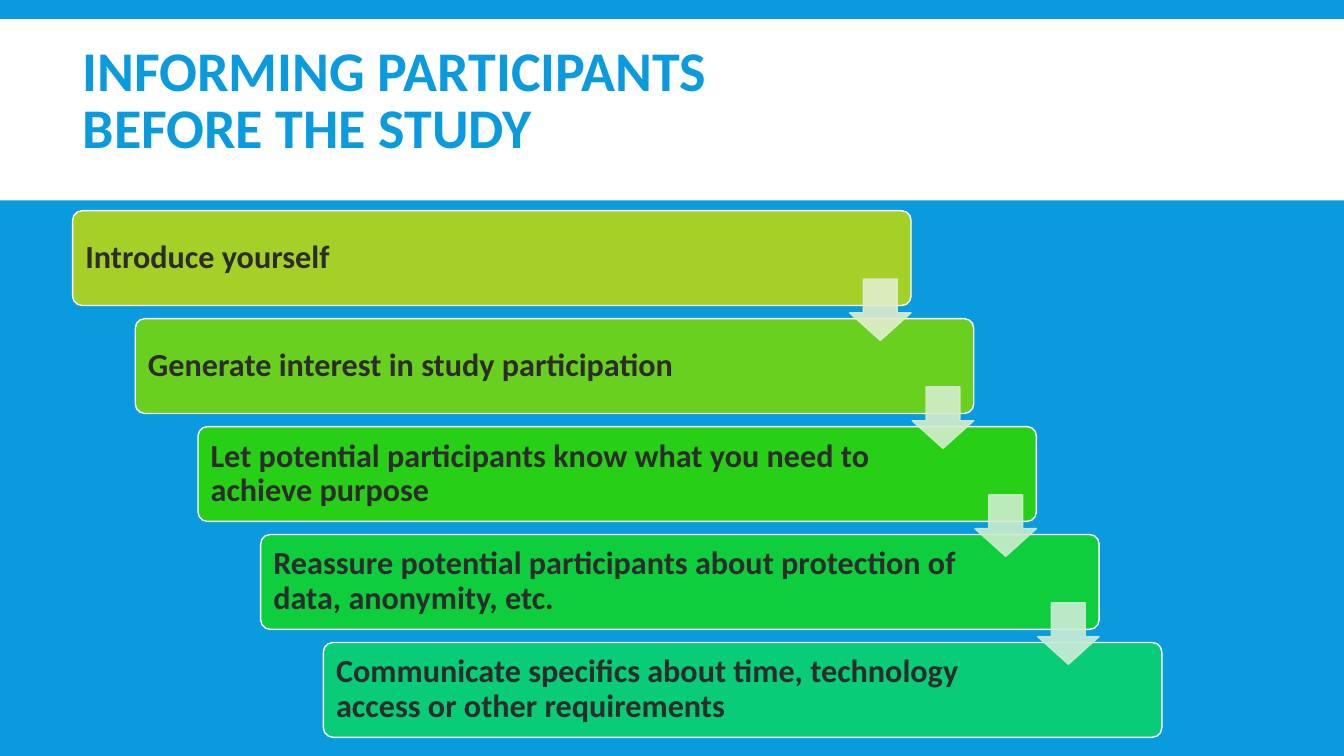
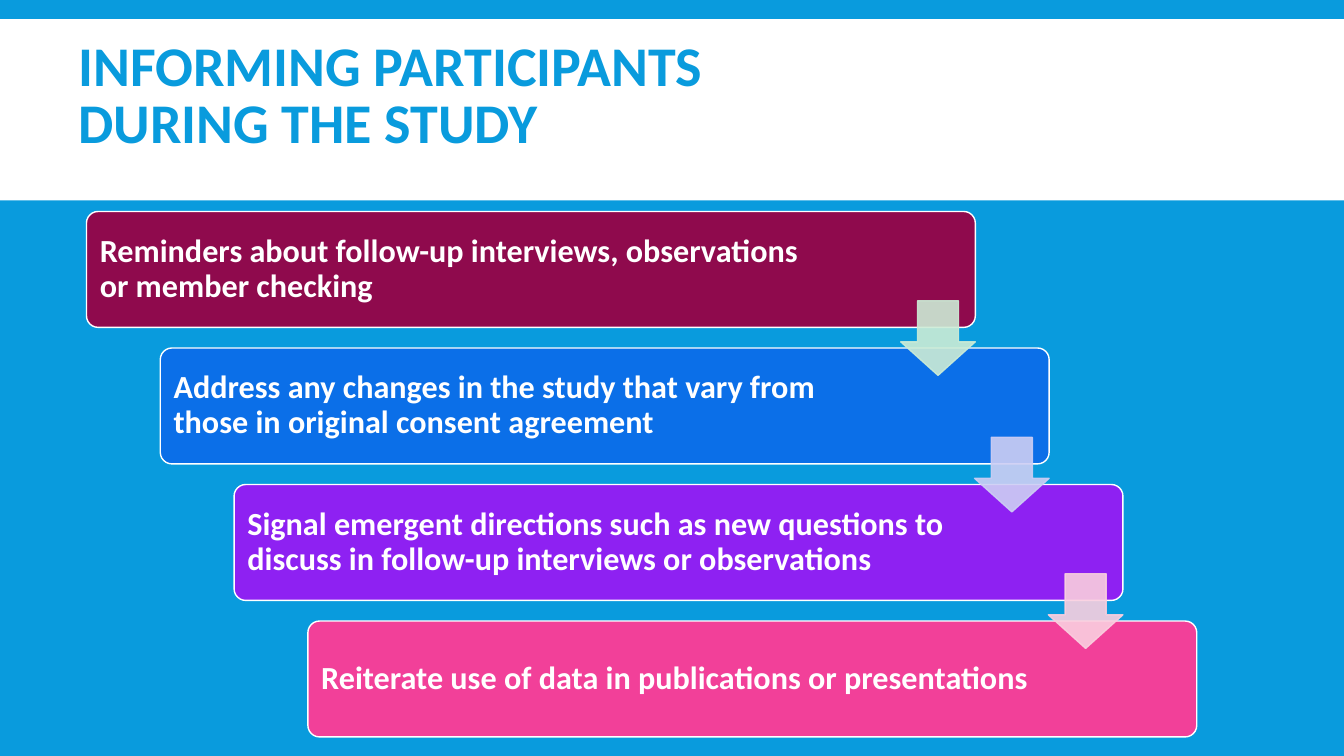
from dataclasses import dataclass

from lxml.etree import SubElement
from pptx import Presentation
from pptx.dml.color import RGBColor
from pptx.enum.shapes import MSO_SHAPE
from pptx.enum.text import MSO_ANCHOR, MSO_AUTO_SIZE, PP_ALIGN
from pptx.oxml.ns import qn
from pptx.util import Cm, Pt

BLUE = "099BDD"
WHITE = "FFFFFF"
DARK = "2C2C2C"
FONT = "Calibri"
SLIDE_WIDTH, SLIDE_HEIGHT = 33.87, 19.05
TITLE_WIDTH, TITLE_HEIGHT = 27.0, 4.17
ARROW_OVERLAP = 0.67
ARROW_OPACITY = 90


@dataclass(frozen=True)
class Step:
    text: str
    fill: str
    arrow: str = ""


@dataclass(frozen=True)
class Staircase:
    title: tuple[str, str]
    title_left: float
    title_top: float
    left: float
    top: float
    width: float
    height: float
    shift: float
    drop: float
    arrow_size: float
    first_inset: float
    next_inset: float
    text_color: str
    steps: tuple[Step, ...]


BEFORE = Staircase(
    title=("INFORMING PARTICIPANTS ", "BEFORE THE STUDY"),
    title_left=1.83, title_top=0.51,
    left=1.83, top=5.31, width=21.13, height=2.39,
    shift=1.58, drop=2.72, arrow_size=1.55,
    first_inset=2.95, next_inset=3.35, text_color=DARK,
    steps=(
        Step("Introduce yourself", "A5D028", "E1EECD"),
        Step("Generate interest in study participation", "69D01F", "D6EDCD"),
        Step("Let potential participants know what you need to achieve purpose",
             "27CF17", "CCEDCD"),
        Step("Reassure potential participants about protection of data, anonymity, etc.",
             "0FCE3D", "CCECD7"),
        Step("Communicate specifics about time, technology access or other requirements",
             "08CC78"),
    ),
)

DURING = Staircase(
    title=("INFORMING PARTICIPANTS ", "DURING THE STUDY"),
    title_left=1.73, title_top=0.38,
    left=2.18, top=5.33, width=22.4, height=2.92,
    shift=1.86, drop=3.44, arrow_size=1.88,
    first_inset=3.48, next_inset=4.04, text_color=WHITE,
    steps=(
        Step("Reminders about follow-up interviews, observations or member checking",
             "8F0A4D", "CCECD6"),
        Step("Address any changes in the study that vary from those in original consent agreement",
             "0B6FE8", "CDCEF4"),
        Step("Signal emergent directions such as new questions to discuss in "
             "follow-up interviews or observations", "8E21F2", "FACFDF"),
        Step("Reiterate use of data in publications or presentations", "F24099"),
    ),
)


def paint(target, color: str) -> None:
    target.solid()
    target.fore_color.rgb = RGBColor.from_string(color)


def add_span(para, text: str, size: float, color: str) -> None:
    span = para.add_run()
    span.text = text
    span.font.name = FONT
    span.font.size = Pt(size)
    span.font.bold = True
    span.font.color.rgb = RGBColor.from_string(color)


def add_block(page, kind, left: float, top: float, width: float, height: float,
              fill: str, outline: str = ""):
    block = page.shapes.add_shape(kind, Cm(left), Cm(top), Cm(width), Cm(height))
    block.shadow.inherit = False
    paint(block.fill, fill)
    if outline:
        paint(block.line.fill, outline)
        block.line.width = Pt(1)
    else:
        block.line.fill.background()
    return block


def set_opacity(shape, percent: int) -> None:
    for color in shape.element.spPr.iter(qn("a:srgbClr")):
        SubElement(color, qn("a:alpha")).set("val", str(percent * 1000))


def add_title(page, stairs: Staircase) -> None:
    title = page.shapes.title
    title.left, title.top = Cm(stairs.title_left), Cm(stairs.title_top)
    title.width, title.height = Cm(TITLE_WIDTH), Cm(TITLE_HEIGHT)
    frame = title.text_frame
    frame.word_wrap = True
    frame.auto_size = MSO_AUTO_SIZE.NONE
    frame.vertical_anchor = MSO_ANCHOR.MIDDLE
    para = frame.paragraphs[0]
    para.alignment = PP_ALIGN.LEFT
    para.line_spacing = 0.85
    first, second = stairs.title
    add_span(para, first, 40, BLUE)
    para.add_line_break()
    add_span(para, second, 40, BLUE)


def add_step(page, stairs: Staircase, index: int, step: Step) -> None:
    box = add_block(page, MSO_SHAPE.ROUNDED_RECTANGLE,
                    stairs.left + index * stairs.shift, stairs.top + index * stairs.drop,
                    stairs.width, stairs.height, step.fill, WHITE)
    box.adjustments[0] = 0.1
    frame = box.text_frame
    frame.word_wrap = True
    frame.vertical_anchor = MSO_ANCHOR.MIDDLE
    frame.margin_left = frame.margin_top = frame.margin_bottom = Cm(0.25)
    frame.margin_right = Cm(stairs.next_inset if index else stairs.first_inset)
    para = frame.paragraphs[0]
    para.alignment = PP_ALIGN.LEFT
    para.line_spacing = 0.9
    add_span(para, step.text, 23, stairs.text_color)


def add_arrow(page, stairs: Staircase, index: int, color: str) -> None:
    size = stairs.arrow_size
    right = stairs.left + index * stairs.shift + stairs.width
    bottom = stairs.top + index * stairs.drop + stairs.height
    arrow = add_block(page, MSO_SHAPE.DOWN_ARROW, right - size, bottom - ARROW_OVERLAP,
                      size, size, color, color)
    arrow.adjustments[0] = 0.55
    arrow.adjustments[1] = 0.45
    set_opacity(arrow, ARROW_OPACITY)


def add_staircase(deck, layout, stairs: Staircase):
    page = deck.slides.add_slide(layout)
    add_title(page, stairs)
    for index, step in enumerate(stairs.steps):
        add_step(page, stairs, index, step)
    for index, step in enumerate(stairs.steps):
        if step.arrow:
            add_arrow(page, stairs, index, step.arrow)
    return page


def main() -> None:
    deck = Presentation()
    deck.slide_width, deck.slide_height = Cm(SLIDE_WIDTH), Cm(SLIDE_HEIGHT)
    layout = deck.slide_layouts[5]
    paint(layout.background.fill, BLUE)
    pages = [add_staircase(deck, layout, stairs) for stairs in (BEFORE, DURING)]
    band = add_block(pages[0], MSO_SHAPE.RECTANGLE, 0, 0.48, SLIDE_WIDTH, 4.57, WHITE)
    layout.shapes.element.insert(2, band.element)
    deck.save("out.pptx")


if __name__ == "__main__":
    main()
